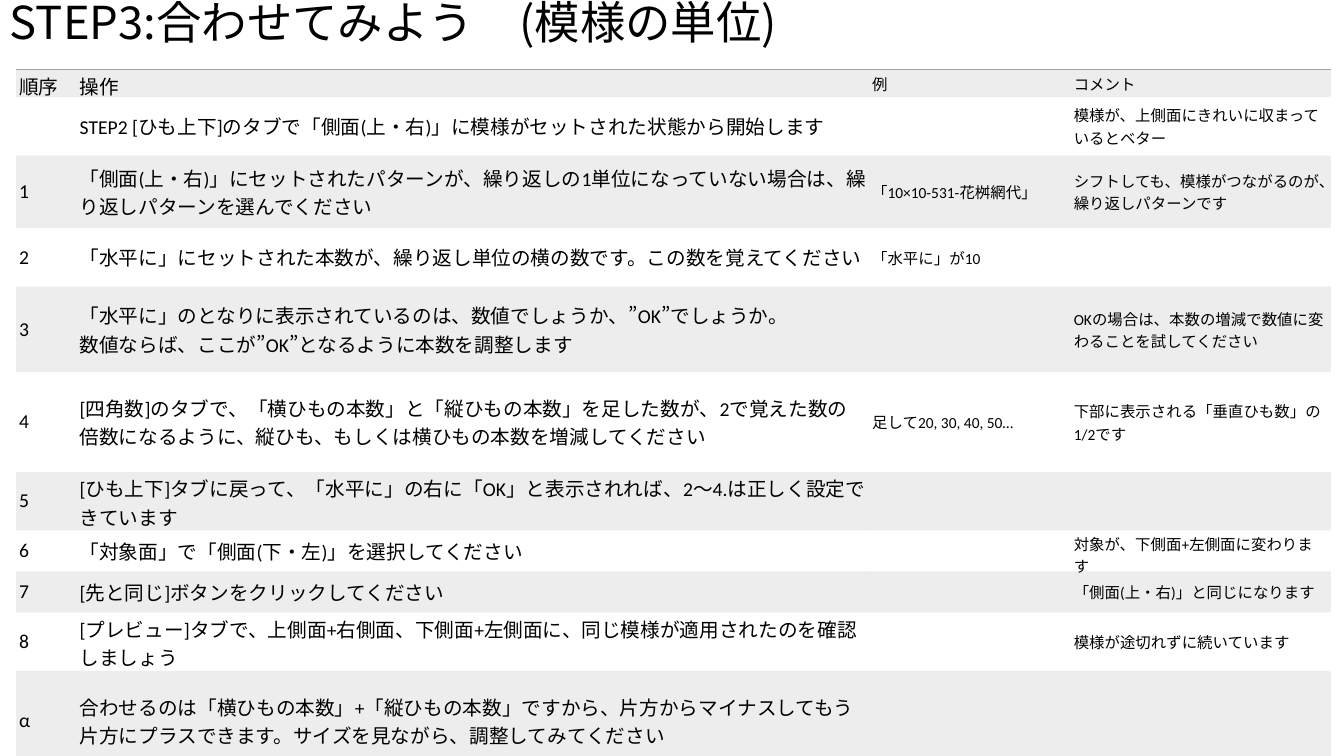
"""Build the STEP3 slide: a title above a banded table of weaving steps."""
from dataclasses import dataclass

from lxml import etree
from pptx import Presentation
from pptx.dml.color import RGBColor
from pptx.enum.lang import MSO_LANGUAGE_ID
from pptx.enum.text import MSO_ANCHOR
from pptx.oxml.ns import qn
from pptx.util import Inches, Pt

MIDDLE = MSO_ANCHOR.MIDDLE
JAPANESE = MSO_LANGUAGE_ID.JAPANESE
PLAIN_TABLE = "{2D5ABB26-0587-4C30-8999-92F81FD0307C}"


@dataclass(frozen=True)
class Theme:
    """Colours, fonts and type sizes."""

    ink: str = "000000"
    band: str = "A5A5A5"
    band_opacity: int = 20
    japanese_font: str = "Noto Sans CJK JP"
    table_font: str = "Calibri"
    title_size: float = 32.4
    step_size: int = 14
    note_size: int = 11
    rule_width: float = 1


TITLE = "STEP3:合わせてみよう　(模様の単位)"
COLUMN_WIDTHS = (0.6, 7.86, 2, 2.58)
STEPS = (
    (0.18, "順序", "操作", "例", "コメント"),
    (0.58, "", "STEP2 [ひも上下]のタブで「側面(上・右)」に模様がセットされた状態から開始します",
     "", "模様が、上側面にきれいに収まっているとベター"),
    (0.72, "1", "「側面(上・右)」にセットされたパターンが、繰り返しの1単位になっていない場合は、"
     "繰り返しパターンを選んでください",
     "「10×10-531-花桝網代」", "シフトしても、模様がつながるのが、繰り返しパターンです"),
    (0.58, "2", "「水平に」にセットされた本数が、繰り返し単位の横の数です。この数を覚えてください",
     "「水平に」が10", ""),
    (0.85, "3", "「水平に」のとなりに表示されているのは、数値でしょうか、”OK”でしょうか。\n"
     "数値ならば、ここが”OK”となるように本数を調整します",
     "", "OKの場合は、本数の増減で数値に変わることを試してください"),
    (0.99, "4", "[四角数]のタブで、「横ひもの本数」と「縦ひもの本数」を足した数が、"
     "2で覚えた数の倍数になるように、縦ひも、もしくは横ひもの本数を増減してください",
     "足して20, 30, 40, 50…", "下部に表示される「垂直ひも数」の1/2です"),
    (0.58, "5", "[ひも上下]タブに戻って、「水平に」の右に「OK」と表示されれば、"
     "2～4.は正しく設定できています", "", ""),
    (0.31, "6", "「対象面」で「側面(下・左)」を選択してください",
     "", "対象が、下側面+左側面に変わります"),
    (0.31, "7", "[先と同じ]ボタンをクリックしてください", "", "「側面(上・右)」と同じになります"),
    (0.58, "8", "[プレビュー]タブで、上側面+右側面、下側面+左側面に、"
     "同じ模様が適用されたのを確認しましょう", "", "模様が途切れずに続いています"),
    (0.99, "α", "合わせるのは「横ひもの本数」+「縦ひもの本数」ですから、"
     "片方からマイナスしてもう片方にプラスできます。サイズを見ながら、調整してみてください",
     "", ""),
)


class StepSlide:
    """Hold the theme and the current slide."""

    def __init__(self, slide, theme):
        """Keep the slide and the theme."""
        self.slide = slide
        self.theme = theme

    def apply(self, target, formats):
        """Set each format value on the target."""
        for name, value in formats.items():
            setattr(target, name, value)

    def add_wording(self, paragraph, wording, font_name, size):
        """Add one run of text in the given font and size."""
        run = paragraph.add_run()
        run.text = wording
        self.apply(run.font, {"name": font_name, "size": Pt(size), "language_id": JAPANESE})
        run.font.color.rgb = RGBColor.from_string(self.theme.ink)
        latin = run.font._element.find(qn("a:latin"))
        latin.addnext(etree.Element(qn("a:ea"), typeface=self.theme.japanese_font))

    def title(self, wording, left, top, width, height):
        """Add the slide title."""
        box = self.slide.shapes.add_textbox(*map(Inches, (left, top, width, height)))
        self.apply(box.text_frame, {"word_wrap": True, "vertical_anchor": MIDDLE})
        heading = box.text_frame.paragraphs[0]
        heading.line_spacing = 0.9
        self.add_wording(heading, wording, self.theme.japanese_font, self.theme.title_size)

    def band(self, cell):
        """Shade a cell with the translucent band colour."""
        cell.fill.solid()
        cell.fill.fore_color.rgb = RGBColor.from_string(self.theme.band)
        colour = cell._tc.tcPr.find(qn("a:solidFill"))[0]
        etree.SubElement(colour, qn("a:alpha"), val=str(self.theme.band_opacity * 1000))

    def rule(self, cell, side):
        """Draw a border on one side of a cell."""
        line = etree.Element(qn(f"a:{side}"), w=str(Pt(self.theme.rule_width)))
        fill = etree.SubElement(line, qn("a:solidFill"))
        etree.SubElement(fill, qn("a:srgbClr"), val=self.theme.band)
        cell._tc.tcPr.insert(0, line)

    def fill_cell(self, cell, wording, size):
        """Fill a cell with its wording, one paragraph a line."""
        self.apply(cell, {
            "vertical_anchor": MIDDLE,
            "margin_left": Inches(0.03), "margin_right": Inches(0.03),
            "margin_top": Inches(0.02), "margin_bottom": Inches(0.02),
        })
        frame = cell.text_frame
        if not wording:
            etree.SubElement(frame.paragraphs[0]._p, qn("a:endParaRPr"), sz=str(size * 100))
            return
        for index, line in enumerate(wording.split("\n")):
            paragraph = frame.add_paragraph() if index else frame.paragraphs[0]
            self.add_wording(paragraph, line, self.theme.table_font, size)

    def table(self, steps, column_widths, left, top):
        """Add the banded table of steps."""
        heights = [step[0] for step in steps]
        frame = self.slide.shapes.add_table(
            len(steps), len(column_widths), Inches(left), Inches(top),
            Inches(sum(column_widths)), Inches(sum(heights)))
        table = frame.table
        self.apply(table, {"first_row": False, "horz_banding": False})
        table._tbl.tblPr.find(qn("a:tableStyleId")).text = PLAIN_TABLE
        for column, width in zip(table.columns, column_widths):
            column.width = Inches(width)
        for row_index, (height, *wordings) in enumerate(steps):
            row = table.rows[row_index]
            row.height = Inches(height)
            for column_index, (cell, wording) in enumerate(zip(row.cells, wordings)):
                size = self.theme.step_size if column_index < 2 else self.theme.note_size
                self.fill_cell(cell, wording, size)
                if row_index % 2 == 0:
                    self.band(cell)
                if row_index == 0:
                    self.rule(cell, "lnT")
                if row_index == len(steps) - 1:
                    self.rule(cell, "lnB")


def main():
    """Build and save the presentation."""
    presentation = Presentation()
    presentation.slide_width = Inches(13.33)
    presentation.slide_height = Inches(7.5)
    slide = presentation.slides.add_slide(presentation.slide_layouts[6])
    steps_slide = StepSlide(slide, Theme())
    steps_slide.title(TITLE, 0, 0, 11.5, 0.5)
    steps_slide.table(STEPS, COLUMN_WIDTHS, 0.16, 0.69)
    presentation.save("out.pptx")


if __name__ == "__main__":
    main()
